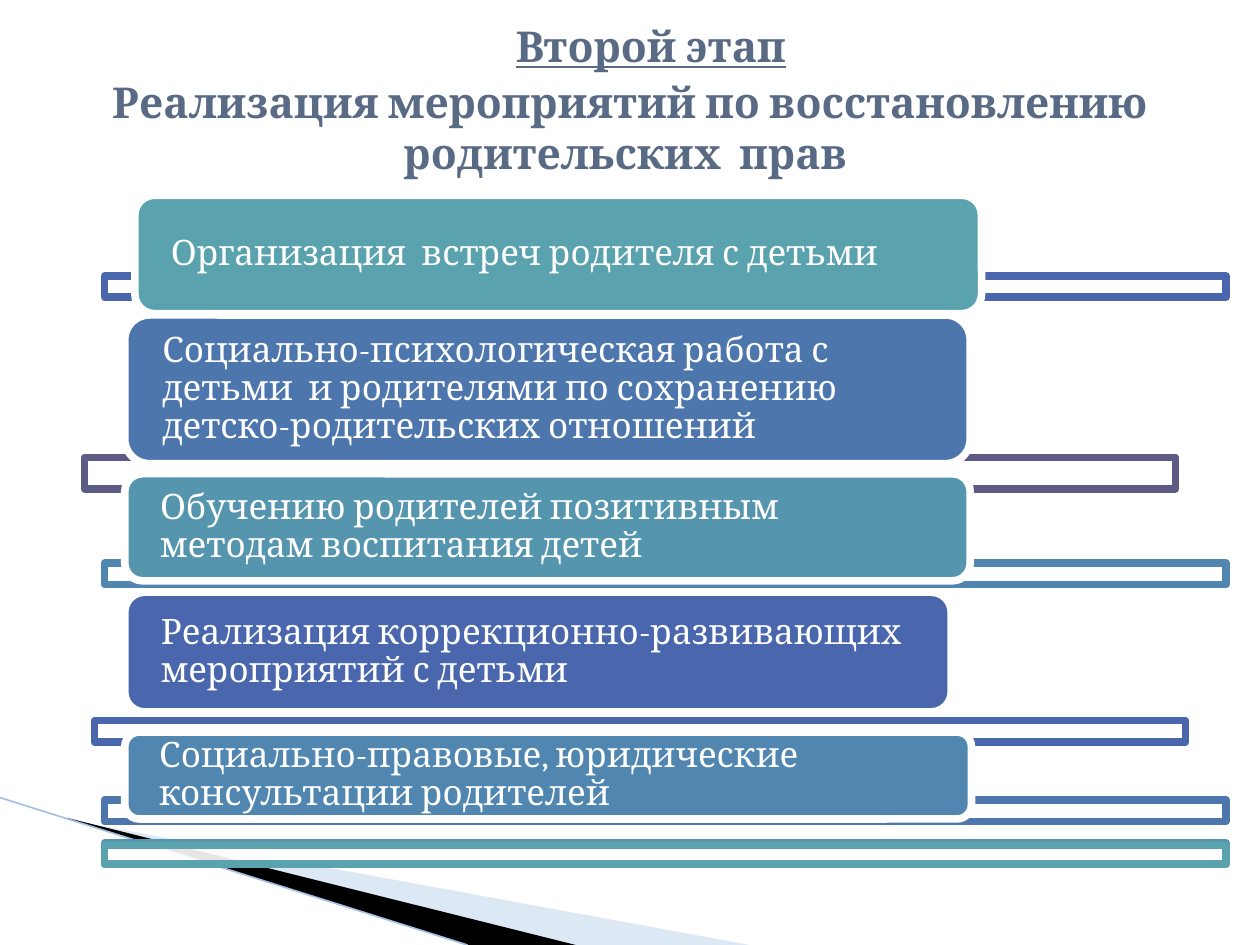
from pptx import Presentation
from pptx.dml.color import RGBColor
from pptx.enum.shapes import MSO_CONNECTOR, MSO_SHAPE
from pptx.enum.text import MSO_ANCHOR, PP_ALIGN
from pptx.oxml.ns import qn
from pptx.util import Inches, Pt
from lxml import etree

RECT, ROUND = MSO_SHAPE.RECTANGLE, MSO_SHAPE.ROUNDED_RECTANGLE
STRAIGHT = MSO_CONNECTOR.STRAIGHT
MIDDLE = MSO_ANCHOR.MIDDLE
LEFT, CENTER = PP_ALIGN.LEFT, PP_ALIGN.CENTER

COLORS = {
    "white": "FFFFFF", "black": "000000", "wedge": "ABC6E6", "edge": "A4C1E3",
    "title": "596A85", "space": "242852", "violet": "5D5B84", "indigo": "4A66AC",
    "blue": "4D76AD", "steel": "5086AF", "sea": "5595AE", "teal": "5AA2AE",
}


def paint(sp, fill, alpha=None, line=None):
    """Set fill, opacity in percent and outline of a shape."""
    sp.shadow.inherit = False
    if fill:
        sp.fill.solid()
        sp.fill.fore_color.rgb = RGBColor.from_string(COLORS[fill])
    else:
        sp.fill.background()
    if alpha:
        color = sp._element.spPr.find(qn("a:solidFill"))[0]
        etree.SubElement(color, qn("a:alpha"), val=str(alpha * 1000))
    if line:
        sp.line.color.rgb = RGBColor.from_string(COLORS[line])
        sp.line.width = Pt(4.33)
    else:
        sp.line.fill.background()


def add_run(p, text, color, **formats):
    r = p.add_run()
    r.text = text
    r.font.color.rgb = RGBColor.from_string(COLORS[color])
    for name, value in formats.items():
        setattr(r.font, name, value)


prs = Presentation()
prs.slide_width, prs.slide_height = Inches(10), Inches(7.5)
s = prs.slides.add_slide(prs.slide_layouts[6])

# Corner decoration
wedges = [
    ("wedge", 40, [(0.55, 6.51), (5.95, 7.5), (4.56, 7.5), (0.55, 6.5)]),
    ("black", None, [(0.53, 6.49), (4.57, 7.5), (3.72, 7.5), (0.54, 6.5)]),
]
for color, alpha, points in wedges:
    points = [(Inches(x), Inches(y)) for x, y in points]
    fb = s.shapes.build_freeform(*points[0])
    fb.add_line_segments(points[1:], close=True)
    paint(fb.convert_to_shape(), color, alpha)
edge = s.shapes.add_connector(STRAIGHT, Inches(0), Inches(6.33), Inches(3.71), Inches(7.5))
edge.line.color.rgb = RGBColor.from_string(COLORS["edge"])
edge.line.width = Pt(0.95)
etree.SubElement(edge._element.spPr, qn("a:effectLst"))

# Title
tf = s.shapes.add_textbox(Inches(0.39), Inches(0.13), Inches(9.22), Inches(1.1)).text_frame
tf.word_wrap = True
tf.vertical_anchor = MIDDLE
p = tf.paragraphs[0]
p.alignment = CENTER
heading = {"name": "Cambria", "size": Pt(24.3), "bold": True}
add_run(p, " ", "space", name="DejaVu Sans Mono", size=Pt(39.6), bold=True)
add_run(p, "Второй этап", "title", underline=True, **heading)
p.add_line_break()
add_run(p, "Реализация мероприятий по восстановлению родительских  прав ", "title", **heading)

# Stages, back to front: bar (left, top, width, height, line), then its box
stages = [
    ((0.67, 3.63, 8.66, 0.25, "violet"), None),
    ((0.75, 5.72, 8.66, 0.17, "indigo"), None),
    ((0.83, 2.19, 8.9, 0.17, "indigo"),
     (0.99, 4.7, 6.56, 0.95, "Реализация коррекционно-развивающих мероприятий с детьми")),
    ((0.83, 6.35, 8.9, 0.17, "blue"),
     (0.99, 2.5, 6.71, 1.18, "Социально-психологическая работа с детьми  и родителями "
                             "по сохранению детско-родительских отношений")),
    ((0.83, 4.47, 8.9, 0.17, "steel"),
     (0.99, 5.81, 6.72, 0.69, "Социально-правовые, юридические  консультации родителей")),
    ((0.83, 6.69, 8.9, 0.17, "sea"),
     (0.99, 3.76, 6.71, 0.85, "Обучению родителей позитивным методам воспитания детей")),
    ((0.83, 6.71, 8.9, 0.15, "teal"),
     (1.07, 1.55, 6.72, 0.94, "Организация  встреч родителя с детьми")),
]
frame = {
    "word_wrap": True, "vertical_anchor": MIDDLE,
    "margin_left": Inches(0.24), "margin_right": Inches(0.24),
    "margin_top": Inches(0), "margin_bottom": Inches(0),
}
for (*bar, color), box in stages:
    sp = s.shapes.add_shape(RECT, *map(Inches, bar))
    if color == "teal":
        paint(sp, None, line=color)
    else:
        paint(sp, "white", 90, color)
    if box:
        *place, text = box
        sp = s.shapes.add_shape(ROUND, *map(Inches, place))
        paint(sp, color, line="white")
        tf = sp.text_frame
        for name, value in frame.items():
            setattr(tf, name, value)
        p = tf.paragraphs[0]
        p.alignment = LEFT
        p.line_spacing = 0.9
        add_run(p, text, "white", name="Cambria", size=Pt(20))

prs.save("out.pptx")
